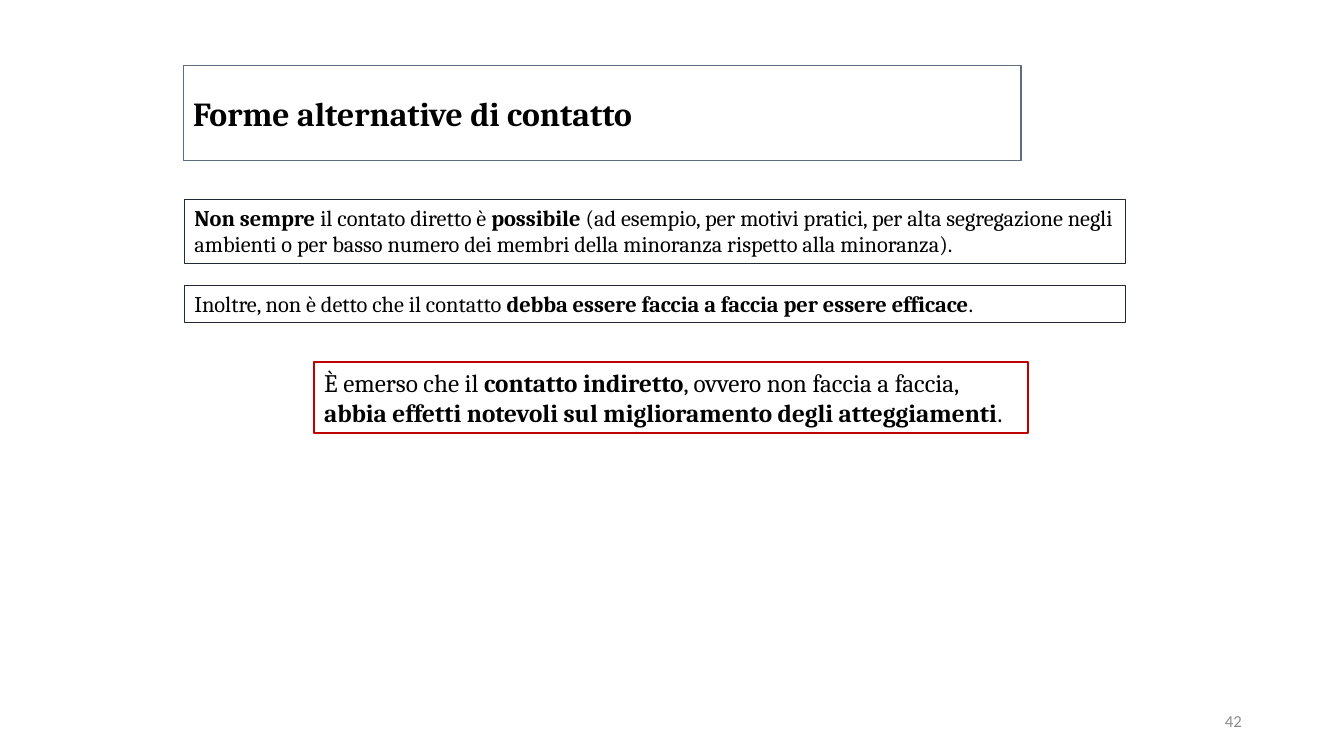
from dataclasses import dataclass
from typing import Optional

import pptx
import pptx.dml.color
import pptx.enum.shapes
import pptx.enum.text
import pptx.util

Cm = pptx.util.Cm
Pt = pptx.util.Pt
RGB = pptx.dml.color.RGBColor
Align = pptx.enum.text.PP_ALIGN
Anchor = pptx.enum.text.MSO_ANCHOR


@dataclass(frozen=True)
class Theme:
    body_font: str = "Cambria"
    number_font: str = "Calibri"
    title_size: float = 24
    key_size: float = 18
    body_size: float = 16
    number_size: float = 12
    text: RGB = RGB(0x00, 0x00, 0x00)
    number: RGB = RGB(0x8C, 0x8C, 0x8C)
    white: RGB = RGB(0xFF, 0xFF, 0xFF)
    title_line: RGB = RGB(0x5E, 0x6C, 0x7F)
    body_line: RGB = RGB(0x22, 0x2A, 0x35)
    key_line: RGB = RGB(0xC0, 0x00, 0x00)


THEME = Theme()


@dataclass(frozen=True)
class Piece:
    text: str
    bold: bool = False


@dataclass(frozen=True)
class Box:
    left: float
    top: float
    width: float
    height: float
    pieces: tuple[Piece, ...]
    size: float
    line: Optional[RGB] = None
    line_width: float = 0
    fill: Optional[RGB] = None
    font: str = THEME.body_font
    color: RGB = THEME.text
    align: Align = Align.LEFT
    anchor: Anchor = Anchor.TOP


BOXES = (
    Box(23.93, 17.65, 7.62, 1.02, (Piece("42"),), THEME.number_size,
        font=THEME.number_font, color=THEME.number,
        align=Align.RIGHT, anchor=Anchor.MIDDLE),
    Box(4.62, 1.65, 21.11, 2.39,
        (Piece("Forme alternative di contatto", True),),
        THEME.title_size, THEME.title_line, 1, anchor=Anchor.MIDDLE),
    Box(7.92, 9.12, 17.98, 1.8,
        (Piece("È emerso che il "),
         Piece("contatto indiretto", True),
         Piece(", ovvero non faccia a faccia, "),
         Piece("abbia effetti notevoli sul miglioramento degli atteggiamenti", True),
         Piece(".")),
        THEME.key_size, THEME.key_line, 1.25, THEME.white),
    Box(4.65, 5.01, 23.72, 1.63,
        (Piece("Non sempre ", True),
         Piece("il contato diretto è "),
         Piece("possibile", True),
         Piece(" (ad esempio, per motivi pratici, per alta segregazione negli "
               "ambienti o per basso numero dei membri della minoranza "
               "rispetto alla minoranza).")),
        THEME.body_size, THEME.body_line, 0.25),
    Box(4.65, 7.19, 23.72, 0.94,
        (Piece("Inoltre, non è detto che il contatto "),
         Piece("debba essere faccia a faccia per essere efficace", True),
         Piece(".")),
        THEME.body_size, THEME.body_line, 0.5),
)


def draw_box(slide: pptx.slide.Slide, box: Box) -> None:
    frame = Cm(box.left), Cm(box.top), Cm(box.width), Cm(box.height)
    if box.line is None:
        sp = slide.shapes.add_textbox(*frame)
    else:
        sp = slide.shapes.add_shape(
            pptx.enum.shapes.MSO_SHAPE.RECTANGLE, *frame)
        sp.shadow.inherit = False
        sp.line.color.rgb = box.line
        sp.line.width = Pt(box.line_width)
        if box.fill is None:
            sp.fill.background()
        else:
            sp.fill.solid()
            sp.fill.fore_color.rgb = box.fill

    tf = sp.text_frame
    tf.word_wrap = True
    tf.vertical_anchor = box.anchor
    p = tf.paragraphs[0]
    p.alignment = box.align
    for piece in box.pieces:
        r = p.add_run()
        r.text = piece.text
        r.font.name = box.font
        r.font.size = Pt(box.size)
        r.font.bold = piece.bold
        r.font.color.rgb = box.color


def main() -> None:
    prs = pptx.Presentation()
    prs.slide_width = Cm(33.87)
    prs.slide_height = Cm(19.05)
    slide = prs.slides.add_slide(prs.slide_layouts[6])
    for box in BOXES:
        draw_box(slide, box)
    prs.save("out.pptx")


if __name__ == "__main__":
    main()
